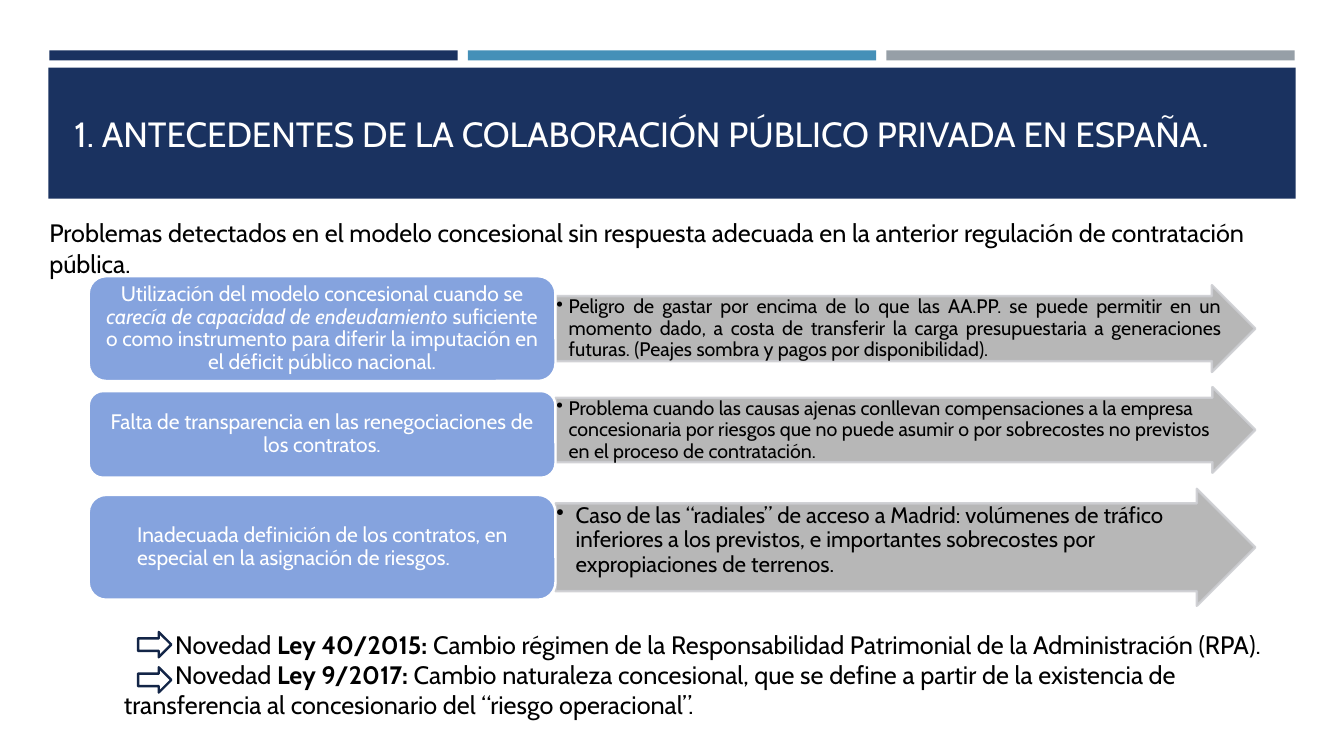
"""Builds the slide on problems in the Spanish concession model."""
from lxml import etree
from pptx import Presentation
from pptx.dml.color import RGBColor
from pptx.enum.shapes import MSO_SHAPE
from pptx.enum.text import MSO_ANCHOR, PP_ALIGN
from pptx.oxml.ns import qn
from pptx.util import Inches, Pt

RECT = MSO_SHAPE.RECTANGLE
ROUNDED = MSO_SHAPE.ROUNDED_RECTANGLE
ARROW = MSO_SHAPE.RIGHT_ARROW
TOP, MIDDLE = MSO_ANCHOR.TOP, MSO_ANCHOR.MIDDLE
LEFT, CENTER, JUSTIFY = PP_ALIGN.LEFT, PP_ALIGN.CENTER, PP_ALIGN.JUSTIFY

FONT = "Cabin"
COLORS = {
    "navy": "1A3260", "blue": "4590B8", "gray": "969FA7", "box": "85A3DE",
    "arrow": "B0B0B0", "arrow_edge": "CDCED2", "marker": "132547",
    "white": "FFFFFF", "black": "000000",
}

TITLE = "1. ANTECEDENTES DE LA COLABORACIÓN PÚBLICO PRIVADA EN ESPAÑA."
INTRO = ("Problemas detectados en el modelo concesional sin respuesta adecuada "
         "en la anterior regulación de contratación pública.")

PROBLEMS = [
    {
        "box": (2.74, 1.04), "box_align": CENTER, "box_indent": 0,
        "problem": [("Utilización del modelo concesional cuando se ", ""),
                    ("carecía de capacidad de endeudamiento ", "italic"),
                    ("suficiente o como instrumento para diferir la imputación "
                     "en el déficit público nacional.", "")],
        "arrow": (2.83, 0.86), "align": JUSTIFY, "size": 14, "hang": 0.12,
        "effect": "Peligro de gastar por encima de lo que las AA.PP. se puede permitir "
                  "en un momento dado, a costa de transferir la carga presupuestaria a "
                  "generaciones futuras. (Peajes sombra y pagos por disponibilidad).",
    },
    {
        "box": (3.88, 0.86), "box_align": CENTER, "box_indent": 0,
        "problem": [("Falta de transparencia en las renegociaciones de los contratos.", "")],
        "arrow": (3.84, 0.85), "align": LEFT, "size": 14, "hang": 0.12,
        "effect": "Problema cuando las causas ajenas conllevan compensaciones a la empresa "
                  "concesionaria por riesgos que no puede asumir o por sobrecostes no "
                  "previstos en el proceso de contratación.",
    },
    {
        "box": (4.91, 1.04), "box_align": LEFT, "box_indent": 0.37,
        "problem": [("Inadecuada definición de los contratos, en especial en la "
                     "asignación de riesgos.", "")],
        "arrow": (4.85, 1.16), "align": LEFT, "size": 16, "hang": 0.19,
        "effect": "Caso de las “radiales” de acceso a Madrid: volúmenes de tráfico "
                  "inferiores a los previstos, e importantes sobrecostes por "
                  "expropiaciones de terrenos.",
    },
]

NEWS = [
    [("Novedad ", ""), ("Ley 40/2015: ", "bold"),
     ("Cambio régimen de la Responsabilidad Patrimonial de la Administración (RPA).", "")],
    [("Novedad ", ""), ("Ley 9/2017: ", "bold"),
     ("Cambio naturaleza concesional, que se define a partir de la existencia de "
      "transferencia al concesionario del “riesgo operacional”.", "")],
]


def rgb(name):
    """Return the named colour."""
    return RGBColor.from_string(COLORS[name])


def add_block(slide, kind, box, fill=None, edge=None):
    """Add a preset shape with optional fill and edge colours."""
    block = slide.shapes.add_shape(kind, *map(Inches, box))
    block.shadow.inherit = False
    if fill:
        block.fill.solid()
        block.fill.fore_color.rgb = rgb(fill)
    else:
        block.fill.background()
    if edge:
        block.line.color.rgb = rgb(edge)
        block.line.width = Pt(1.75)
    else:
        block.line.fill.background()
    return block


def set_frame(frame, anchor, side, vertical):
    """Set wrapping, anchor and insets of a text frame."""
    frame.word_wrap = True
    frame.vertical_anchor = anchor
    frame.margin_left = frame.margin_right = Inches(side)
    frame.margin_top = frame.margin_bottom = Inches(vertical)


def write(paragraph, runs, size, color, align=LEFT, left=0, first=0, spacing=1.0):
    """Fill a paragraph with (text, style) runs and format it."""
    paragraph.alignment = align
    paragraph.line_spacing = spacing
    paragraph.font.name = FONT
    paragraph.font.size = Pt(size)
    paragraph.font.color.rgb = rgb(color)
    for words, style in runs:
        run = paragraph.add_run()
        run.text = words
        if style:
            setattr(run.font, style, True)
    properties = paragraph._p.get_or_add_pPr()
    properties.set("marL", str(Inches(left)))
    properties.set("indent", str(Inches(first)))


def add_bullet(paragraph):
    """Give a paragraph a round bullet."""
    properties = paragraph._p.get_or_add_pPr()
    bullet = etree.Element(qn("a:buChar"), char="•")
    properties.insert_element_before(bullet, "a:tabLst", "a:defRPr", "a:extLst")


def make_translucent(block, percent):
    """Set the opacity of a shape's fill and line."""
    for color in block._element.spPr.iter(qn("a:srgbClr")):
        etree.SubElement(color, qn("a:alpha"), val=str(percent * 1000))


def add_text(slide, box, paragraphs, size, color, anchor=TOP, first=0):
    """Add a text box with one entry per paragraph."""
    frame = slide.shapes.add_textbox(*map(Inches, box)).text_frame
    set_frame(frame, anchor, 0.1, 0.05)
    for index, runs in enumerate(paragraphs):
        paragraph = frame.add_paragraph() if index else frame.paragraphs[0]
        write(paragraph, runs, size, color, first=first)


def add_header(slide):
    """Add the three coloured bars and the title band."""
    for index, color in enumerate(("navy", "blue", "gray")):
        add_block(slide, RECT, (0.49 + 4.15 * index, 0.5, 4.05, 0.1), color)
    add_block(slide, RECT, (0.48, 0.67, 12.37, 1.3), "navy")
    add_text(slide, (0.64, 0.77, 12.06, 1.11), [[(TITLE, "")]], 25, "white", MIDDLE)


def add_problem(slide, row):
    """Add one problem box with the arrow that states its effect."""
    top, height = row["arrow"]
    arrow = add_block(slide, ARROW, (5.51, top, 6.94, height), "arrow", "arrow_edge")
    arrow.adjustments[0] = 0.75
    make_translucent(arrow, 90)
    set_frame(arrow.text_frame, TOP, 0.01, 0.01)
    effect = arrow.text_frame.paragraphs[0]
    write(effect, [(row["effect"], "")], row["size"], "black", row["align"],
          row["hang"], -row["hang"], 0.9)
    add_bullet(effect)

    top, height = row["box"]
    box = add_block(slide, ROUNDED, (0.88, top, 4.63, height), "box", "white")
    set_frame(box.text_frame, MIDDLE, 0.06, 0.03)
    write(box.text_frame.paragraphs[0], row["problem"], 15, "white",
          row["box_align"], row["box_indent"], spacing=0.9)


def main():
    """Build and save the slide."""
    deck = Presentation()
    deck.slide_width, deck.slide_height = Inches(13.33), Inches(7.5)
    slide = deck.slides.add_slide(deck.slide_layouts[6])
    add_header(slide)
    for row in PROBLEMS:
        add_problem(slide, row)
    add_text(slide, (0.39, 2.11, 12.55, 0.4), [[(INTRO, "")]], 18, "black")
    add_text(slide, (1.13, 6.19, 11.57, 1.01), NEWS, 18, "black", first=0.51)
    for index in range(len(NEWS)):
        add_block(slide, ARROW, (1.37, 6.27 + 0.35 * index, 0.33, 0.25), edge="marker")
    deck.save("out.pptx")


if __name__ == "__main__":
    main()
